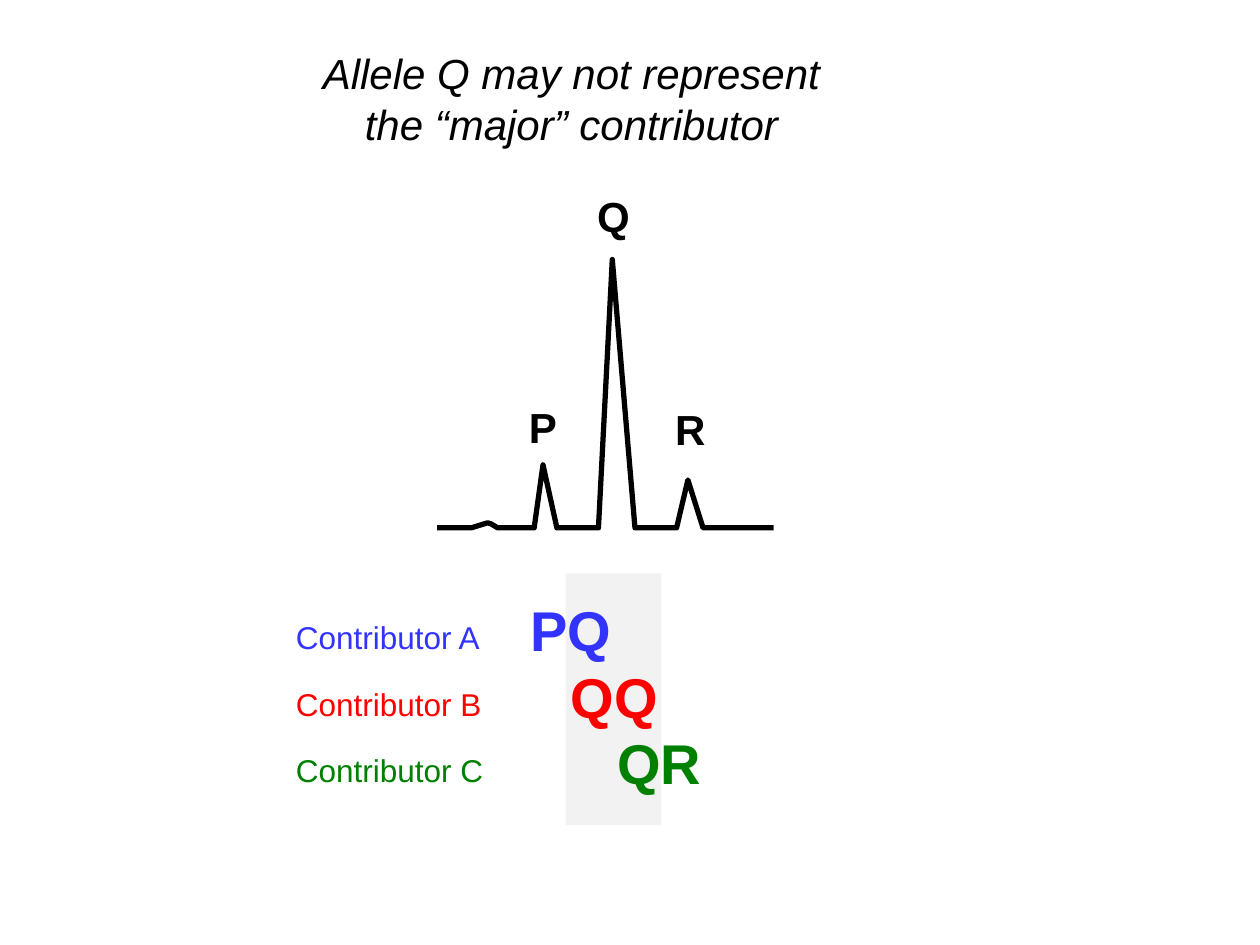
from typing import NamedTuple

from lxml import etree
from pptx import Presentation
from pptx.dml.color import RGBColor
from pptx.enum.shapes import MSO_SHAPE
from pptx.enum.text import MSO_ANCHOR, MSO_AUTO_SIZE, PP_ALIGN
from pptx.oxml.ns import qn
from pptx.util import Inches, Pt

BLACK = RGBColor(0x00, 0x00, 0x00)
BLUE = RGBColor(0x33, 0x33, 0xFF)
RED = RGBColor(0xFF, 0x00, 0x00)
GREEN = RGBColor(0x00, 0x80, 0x00)
PALE_GRAY = RGBColor(0xF2, 0xF2, 0xF2)
RECTANGLE = MSO_SHAPE.RECTANGLE
TOP = MSO_ANCHOR.TOP
CENTER = PP_ALIGN.CENTER
NO_RESIZE = MSO_AUTO_SIZE.NONE
FIT_SHAPE = MSO_AUTO_SIZE.SHAPE_TO_FIT_TEXT
FONT = "Arial"
TITLE_ONLY = 5
BASELINE = 4.19
ROW_TOP = 4.68
ROW_PITCH = 0.525
NAME_DROP = 0.18


class Label(NamedTuple):
    text: str
    left: float
    top: float
    width: float
    height: float
    size: int
    color: RGBColor = BLACK
    bold: bool = True


class Peak(NamedTuple):
    start: float
    apex: float
    end: float
    apex_top: float
    label: Label


class Contributor(NamedTuple):
    name: str
    name_width: float
    genotype: str
    genotype_left: float
    genotype_width: float
    color: RGBColor


PEAKS = [
    Peak(4.24, 4.31, 4.42, 3.69, Label("P", 4.1, 3.14, 0.43, 0.5, 24)),
    Peak(4.75, 4.86, 5.04, 2.06, Label("Q", 4.64, 1.46, 0.46, 0.5, 24)),
    Peak(5.37, 5.46, 5.58, 3.81, Label("R", 5.26, 3.15, 0.45, 0.5, 24)),
]
CONTRIBUTORS = [
    Contributor("Contributor A", 1.67, "PQ", 4.11, 0.85, BLUE),
    Contributor("Contributor B", 1.76, "QQ", 4.43, 0.9, RED),
    Contributor("Contributor C", 1.7, "QR", 4.8, 0.88, GREEN),
]


def add_title(page, text: str) -> None:
    title = page.shapes.title
    title.left, title.top = Inches(2.35), Inches(0.33)
    title.width, title.height = Inches(4.37), Inches(0.91)
    frame = title.text_frame
    frame.text = text
    frame.word_wrap = True
    frame.auto_size = NO_RESIZE
    frame.vertical_anchor = TOP
    paragraph = frame.paragraphs[0]
    paragraph.alignment = CENTER
    font = paragraph.font
    font.name, font.size, font.italic = FONT, Pt(24), True
    font.color.rgb = BLACK


def add_label(page, label: Label) -> None:
    box = page.shapes.add_textbox(
        Inches(label.left), Inches(label.top), Inches(label.width), Inches(label.height)
    )
    frame = box.text_frame
    frame.text = label.text
    frame.word_wrap = False
    frame.auto_size = FIT_SHAPE
    font = frame.paragraphs[0].font
    font.name, font.size, font.bold = FONT, Pt(label.size), label.bold
    font.color.rgb = label.color


def add_band(page) -> None:
    band = page.shapes.add_shape(
        RECTANGLE, Inches(4.49), Inches(4.55), Inches(0.76), Inches(2)
    )
    band.shadow.inherit = False
    band.fill.solid()
    band.fill.fore_color.rgb = PALE_GRAY
    band.line.fill.background()


def add_trace(page, peaks: list[Peak]) -> None:
    points = [(3.74, BASELINE), (3.87, 4.15), (3.9, 4.16), (3.95, BASELINE)]
    for peak in peaks:
        points += [
            (peak.start, BASELINE),
            (peak.apex, peak.apex_top),
            (peak.end, BASELINE),
        ]
    points.append((6.14, BASELINE))
    builder = page.shapes.build_freeform(
        Inches(3.47), Inches(BASELINE)
    )
    builder.add_line_segments([(Inches(x), Inches(y)) for x, y in points], close=False)
    trace = builder.convert_to_shape()
    trace.shadow.inherit = False
    trace.fill.background()
    trace.line.color.rgb = BLACK
    trace.line.width = Pt(3)
    etree.SubElement(trace.line._get_or_add_ln(), qn("a:round"))


def add_contributor(page, contributor: Contributor, top: float) -> None:
    add_label(page, Label(
        contributor.genotype, contributor.genotype_left, top,
        contributor.genotype_width, 0.64, 32, contributor.color,
    ))
    add_label(page, Label(
        contributor.name, 2.25, top + NAME_DROP,
        contributor.name_width, 0.4, 18, contributor.color, False,
    ))


def main() -> None:
    deck = Presentation()
    deck.slide_width, deck.slide_height = Inches(10), Inches(7.5)
    page = deck.slides.add_slide(deck.slide_layouts[TITLE_ONLY])
    add_title(page, "Allele Q may not represent the “major” contributor")
    add_band(page)
    add_trace(page, PEAKS)
    for peak in PEAKS:
        add_label(page, peak.label)
    for row, contributor in enumerate(CONTRIBUTORS):
        add_contributor(page, contributor, ROW_TOP + row * ROW_PITCH)
    deck.save("out.pptx")


if __name__ == "__main__":
    main()
